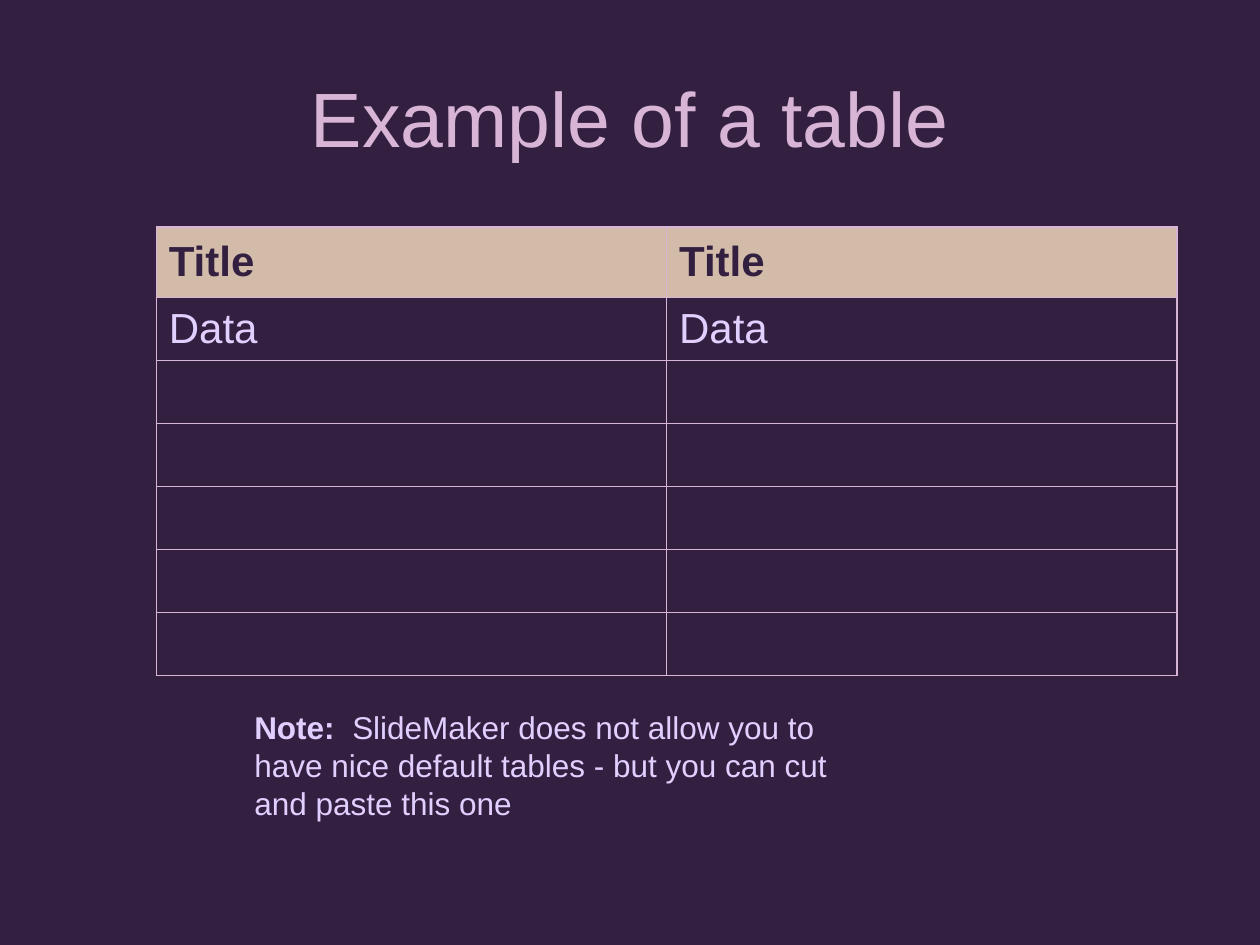
from typing import NamedTuple

from lxml.etree import SubElement
from pptx import Presentation
from pptx.dml.color import RGBColor
from pptx.enum.text import MSO_ANCHOR, MSO_AUTO_SIZE, PP_ALIGN
from pptx.oxml.ns import qn
from pptx.util import Pt

PLUM = RGBColor(0x33, 0x20, 0x41)
PINK = RGBColor(0xD8, 0xB5, 0xD7)
SAND = RGBColor(0xD3, 0xBB, 0xA9)
LILAC = RGBColor(0xE1, 0xCF, 0xFF)
FONT = "Arial"


class Frame(NamedTuple):
    left: float
    top: float
    width: float
    height: float

    def lengths(self):
        return [Pt(value) for value in self]


class RowStyle(NamedTuple):
    texts: tuple
    height: float = 36
    color: RGBColor = LILAC
    bold: bool = False
    fill: RGBColor | None = None


TITLE_FRAME = Frame(36, 21.6, 648, 90)
TABLE_FRAME = Frame(89.28, 129.6, 583.2, 256.32)
NOTE_FRAME = Frame(138.24, 401.04, 520.56, 72)
ROWS = [
    RowStyle(("Title", "Title"), height=40.32, color=PLUM, bold=True, fill=SAND),
    RowStyle(("Data", "Data")),
    *[RowStyle(("", ""))] * 5,
]
NOTE_LINES = (
    "SlideMaker does not allow you to ",
    "have nice default tables - but you can cut ",
    "and paste this one",
)


def add_text(para, text: str, *, size: float, color: RGBColor, bold: bool = False):
    """Append formatted text to a paragraph, breaking lines at each newline."""
    for index, line in enumerate(text.split("\n")):
        if index:
            para.add_line_break()
        span = para.add_run()
        span.text = line
        span.font.name = FONT
        span.font.size = Pt(size)
        span.font.bold = bold
        span.font.color.rgb = color


def add_borders(cell, color: RGBColor, width: float):
    """Outline all four sides; call before setting the cell fill."""
    properties = cell._tc.get_or_add_tcPr()
    for side in ("a:lnL", "a:lnR", "a:lnT", "a:lnB"):
        line = SubElement(properties, qn(side), w=str(Pt(width)))
        fill = SubElement(line, qn("a:solidFill"))
        SubElement(fill, qn("a:srgbClr"), val=str(color))


def fill_cell(cell, text: str, style: RowStyle):
    add_borders(cell, PINK, 1)
    if style.fill is None:
        cell.fill.background()
    else:
        cell.fill.solid()
        cell.fill.fore_color.rgb = style.fill
    cell.vertical_anchor = MSO_ANCHOR.MIDDLE
    if text:
        add_text(cell.text_frame.paragraphs[0], text,
                 size=24, color=style.color, bold=style.bold)


def add_title(page):
    title = page.shapes.title
    title.left, title.top, title.width, title.height = TITLE_FRAME.lengths()
    title.text_frame.vertical_anchor = MSO_ANCHOR.MIDDLE
    para = title.text_frame.paragraphs[0]
    para.alignment = PP_ALIGN.CENTER
    add_text(para, "Example of a table", size=44, color=PINK)


def add_data_table(page):
    columns = len(ROWS[0].texts)
    table = page.shapes.add_table(len(ROWS), columns, *TABLE_FRAME.lengths()).table
    table.first_row = False
    table.horz_banding = False
    for row, style in zip(table.rows, ROWS):
        row.height = Pt(style.height)
        for cell, text in zip(row.cells, style.texts):
            fill_cell(cell, text, style)


def add_note(page):
    box = page.shapes.add_textbox(*NOTE_FRAME.lengths())
    box.text_frame.word_wrap = True
    box.text_frame.auto_size = MSO_AUTO_SIZE.SHAPE_TO_FIT_TEXT
    para = box.text_frame.paragraphs[0]
    add_text(para, "Note:  ", size=18, color=LILAC, bold=True)
    add_text(para, "\n".join(NOTE_LINES), size=18, color=LILAC)


def main():
    deck = Presentation()
    deck.slide_width, deck.slide_height = Pt(720), Pt(540)
    page = deck.slides.add_slide(deck.slide_layouts.get_by_name("Title Only"))
    page.background.fill.solid()
    page.background.fill.fore_color.rgb = PLUM
    add_title(page)
    add_data_table(page)
    add_note(page)
    deck.save("out.pptx")


if __name__ == "__main__":
    main()
